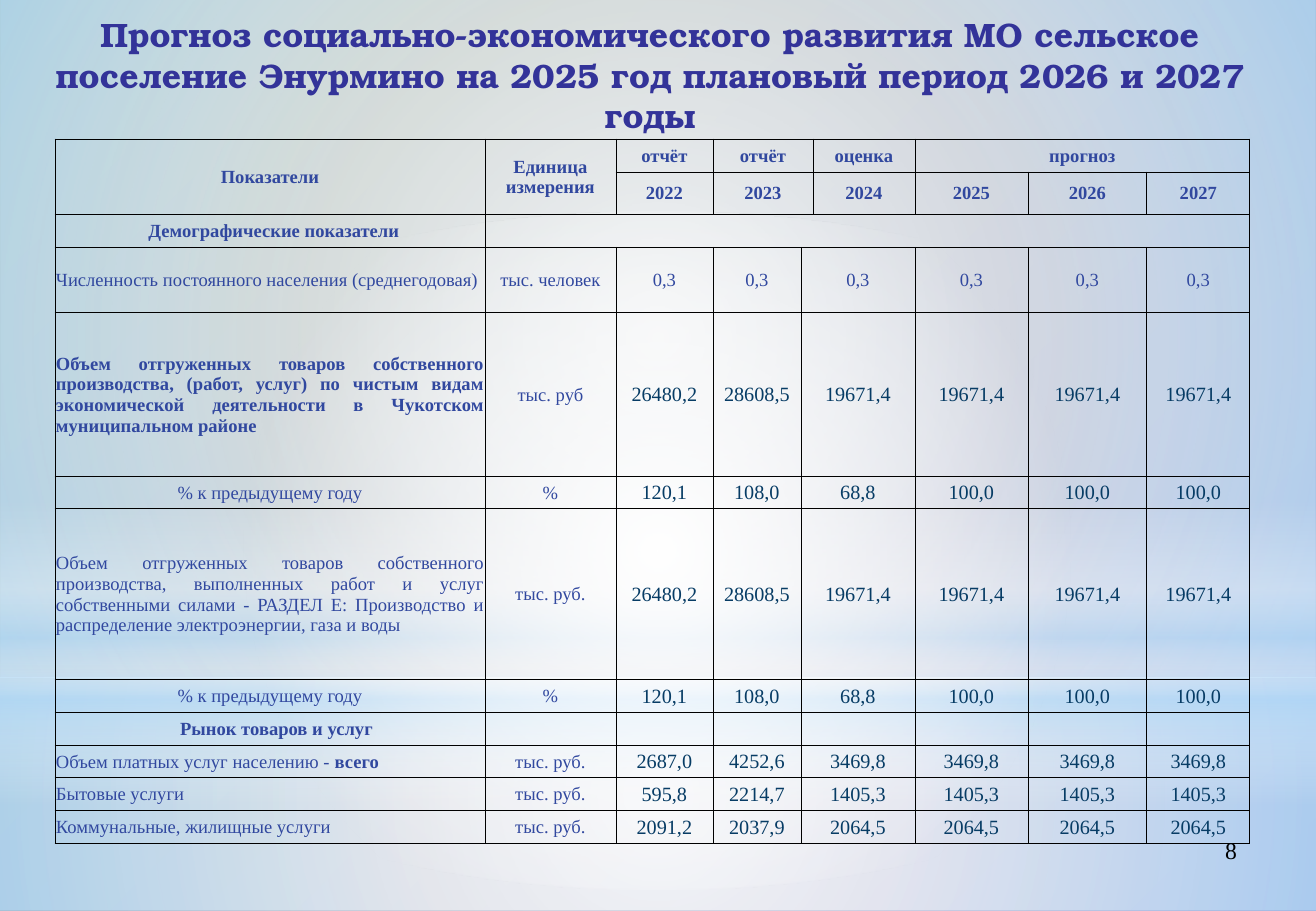
from dataclasses import dataclass

from lxml import etree
from pptx import Presentation
from pptx import util as u
from pptx.dml.color import RGBColor
from pptx.enum import shapes, text
from pptx.oxml.ns import qn

TITLE = ("Прогноз социально-экономического развития МО сельское поселение "
         "Энурмино на 2025 год плановый период 2026 и 2027 годы")
PAGE = "8"

# row, column, rows spanned, columns spanned, label
HEADER = [
    (0, 0, 2, 1, "Показатели"),
    (0, 1, 2, 1, "Единица измерения"),
    (0, 2, 1, 1, "отчёт"), (0, 3, 1, 2, "отчёт"),
    (0, 5, 1, 1, "оценка"), (0, 6, 1, 3, "прогноз"),
    (1, 2, 1, 1, "2022"), (1, 3, 1, 2, "2023"), (1, 5, 1, 1, "2024"),
    (1, 6, 1, 1, "2025"), (1, 7, 1, 1, "2026"), (1, 8, 1, 1, "2027"),
]
# row, label, indent, columns spanned by the empty part, its first column
SECTIONS = [
    (2, "Демографические показатели", 9, 8, 1),
    (8, "Рынок товаров и услуг", 14, 2, 4),
]
SHIPPED = ["26480,2", "28608,5"] + ["19671,4"] * 4
GROWTH = ["120,1", "108,0", "68,8"] + ["100,0"] * 3
LEFT, CENTER, JUSTIFY, RIGHT = (
    text.PP_ALIGN.LEFT, text.PP_ALIGN.CENTER,
    text.PP_ALIGN.JUSTIFY, text.PP_ALIGN.RIGHT)
# row, indicator, bold ending, format of the indicator, unit, values
INDICATORS = [
    (3, "Численность постоянного населения (среднегодовая)", "",
     dict(align=LEFT), "тыс. человек", ["0,3"] * 6),
    (4, "Объем отгруженных товаров собственного производства, (работ, услуг) "
        "по чистым видам экономической деятельности в Чукотском "
        "муниципальном районе", "",
     dict(align=JUSTIFY, bold=True), "тыс. руб", SHIPPED),
    (5, "% к предыдущему году", "", dict(align=CENTER), "%", GROWTH),
    (6, "Объем отгруженных товаров собственного производства, выполненных "
        "работ и услуг собственными силами - РАЗДЕЛ E: Производство и "
        "распределение электроэнергии, газа и воды", "",
     dict(align=JUSTIFY), "тыс. руб.", SHIPPED),
    (7, "% к предыдущему году", "", dict(align=CENTER), "%", GROWTH),
    (9, "Объем платных услуг населению - ", "всего",
     dict(align=LEFT), "тыс. руб.", ["2687,0", "4252,6"] + ["3469,8"] * 4),
    (10, "Бытовые услуги", "",
     dict(align=LEFT), "тыс. руб.", ["595,8", "2214,7"] + ["1405,3"] * 4),
    (11, "Коммунальные, жилищные услуги", "",
     dict(align=LEFT), "тыс. руб.", ["2091,2", "2037,9"] + ["2064,5"] * 4),
]
POPULATION_ROW = 3
VALUE_COLUMNS = [2, 3, 4, 6, 7, 8]

COLUMNS = [430, 131, 97, 88, 12, 102, 113, 119, 103]
ROWS = [33, 42, 33, 65, 164, 32, 171, 33, 33, 32, 33, 33]
TABLE_AT = (55, 139)
TITLE_AT = (38, 28, 1224, 93)
PAGE_AT = (942, 829, 307, 63)

RECT, OVAL = shapes.MSO_SHAPE.RECTANGLE, shapes.MSO_SHAPE.OVAL
BACKGROUND = [(0, "96AB94", 100), (100, "8488C4", 100)]
# shape, place, linear angle (None for radial), stops of (position, colour, opacity)
GLOWS = [
    (RECT, (0, 677, 1316, 233), None,
     [(0, "FFFFFF", 91), (37, "FFFFFF", 76), (100, "B4DCFA", 79)]),
    (RECT, (0, 0, 1316, 677), None,
     [(0, "FFFFFF", 89), (48, "FFFFFF", 62), (100, "B4DCFA", 79)]),
    (RECT, (0, 500, 1316, 304), 90,
     [(0, "FFFFFF", 0), (29, "FFFFFF", 30), (45, "B4DCFA", 40),
      (55, "FFFFFF", 26), (65, "B4DCFA", 60), (100, "FFFFFF", 0)]),
    (OVAL, (0, 212, 1316, 677), None,
     [(0, "FFFFFF", 100), (56, "FFFFFF", 0)]),
]


@dataclass(frozen=True)
class Theme:
    heading: str = "TeX Gyre Bonum"
    body: str = "Times New Roman"
    title: str = "333399"
    label: str = "31489F"
    value: str = "073C65"
    black: str = "000000"
    title_size: int = 20
    page_size: int = 14
    value_size: int = 12
    label_size: int = 11


THEME = Theme()


def px(length):
    return u.Emu(round(length * 914400 / 121.4))


def place(shape, box):
    shape.left, shape.top, shape.width, shape.height = map(px, box)


def write(frame, words, bold_end="", size=THEME.label_size, color=THEME.label,
          font=THEME.body, bold=False, align=CENTER):
    """Fill the first paragraph; bold_end is a closing run set in bold."""
    paragraph = frame.paragraphs[0]
    paragraph.alignment = align
    for part, heavy in ((words, bold), (bold_end, True)):
        if part:
            run = paragraph.add_run()
            run.text = part
            run.font.name, run.font.size, run.font.bold = font, u.Pt(size), heavy
            run.font.color.rgb = RGBColor.from_string(color)


def add(parent, tag, **attributes):
    return etree.SubElement(parent, qn(tag), **{k: str(v) for k, v in attributes.items()})


def paint(fill, owner, stops, angle):
    """Give owner a gradient with opacity; radial when angle is None."""
    fill.gradient()
    gradient = next(owner.iter(qn("a:gradFill")))
    for child in list(gradient):
        gradient.remove(child)
    stop_list = add(gradient, "a:gsLst")
    for position, color, opacity in stops:
        stop = add(stop_list, "a:gs", pos=position * 1000)
        add(add(stop, "a:srgbClr", val=color), "a:alpha", val=opacity * 1000)
    if angle is None:
        radial = add(gradient, "a:path", path="circle")
        add(radial, "a:fillToRect", l=50000, t=50000, r=50000, b=50000)
    else:
        add(gradient, "a:lin", ang=angle * 60000, scaled=0)


def prepare(cell):
    """Thin black borders, no fill, tight margins, small empty line."""
    cell.margin_left = cell.margin_right = cell.margin_top = px(1)
    cell.margin_bottom = 0
    cell.vertical_anchor = text.MSO_ANCHOR.MIDDLE
    properties = cell._tc.get_or_add_tcPr()
    for side in "LRTB":
        line = add(properties, f"a:ln{side}", w=6350)
        add(add(line, "a:solidFill"), "a:srgbClr", val=THEME.black)
    cell.fill.background()
    add(cell.text_frame.paragraphs[0]._p, "a:endParaRPr", sz=THEME.label_size * 100)


def add_forecast(slide):
    table = slide.shapes.add_table(
        len(ROWS), len(COLUMNS), *map(px, (*TABLE_AT, sum(COLUMNS), sum(ROWS)))).table
    table.first_row = table.horz_banding = False
    for column, width in zip(table.columns, COLUMNS):
        column.width = px(width)
    for row, height in zip(table.rows, ROWS):
        row.height = px(height)
    for cell in table.iter_cells():
        prepare(cell)

    def span(row, column, down, across):
        cell = table.cell(row, column)
        if down * across > 1:
            cell.merge(table.cell(row + down - 1, column + across - 1))
        return cell

    for *area, label in HEADER:
        write(span(*area).text_frame, label, bold=True)
    for row, label, indent, across, first in SECTIONS:
        heading = table.cell(row, 0)
        heading.margin_left = px(indent)
        write(heading.text_frame, label, bold=True)
        span(row, first, 1, across)
    for row, label, bold_end, style, unit, values in INDICATORS:
        write(table.cell(row, 0).text_frame, label, bold_end, **style)
        write(table.cell(row, 1).text_frame, unit)
        figures = {} if row == POPULATION_ROW else dict(
            size=THEME.value_size, color=THEME.value)
        for column, value in zip(VALUE_COLUMNS, values):
            cell = span(row, column, 1, 2 if column == 4 else 1)
            write(cell.text_frame, value, **figures)


def main():
    deck = Presentation()
    deck.slide_width, deck.slide_height = u.Inches(10.84), u.Inches(7.5)
    slide = deck.slides.add_slide(deck.slide_layouts[5])
    paint(slide.background.fill, slide._element, BACKGROUND, 45)
    for kind, box, angle, stops in GLOWS:
        glow = slide.shapes.add_shape(kind, *map(px, box))
        glow.shadow.inherit = False
        glow.line.fill.background()
        paint(glow.fill, glow._element, stops, angle)

    page = slide.shapes.add_textbox(*map(px, PAGE_AT))
    page.text_frame.word_wrap = True
    write(page.text_frame, PAGE, size=THEME.page_size, color=THEME.black, align=RIGHT)

    title = slide.shapes.title
    slide.shapes._spTree.append(title._element)  # bring in front of the glows
    place(title, TITLE_AT)
    title.text_frame.auto_size = text.MSO_AUTO_SIZE.NONE
    title.text_frame.vertical_anchor = text.MSO_ANCHOR.MIDDLE
    write(title.text_frame, TITLE, size=THEME.title_size, color=THEME.title,
          font=THEME.heading, bold=True)

    add_forecast(slide)
    deck.save("out.pptx")


if __name__ == "__main__":
    main()
